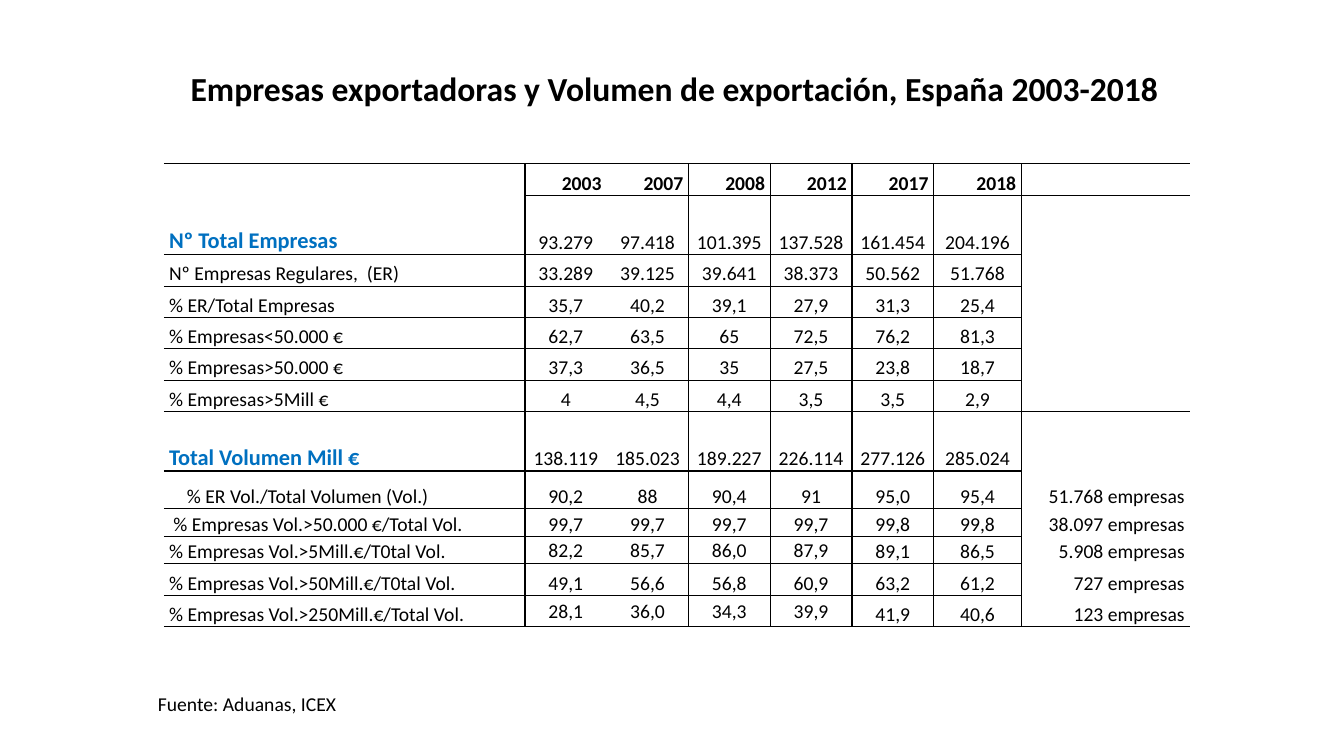
from lxml import etree
from pptx import Presentation
from pptx.dml.color import RGBColor
from pptx.enum.text import MSO_ANCHOR, PP_ALIGN
from pptx.oxml.ns import qn
from pptx.util import Cm, Pt

LEFT, CENTER, RIGHT = PP_ALIGN.LEFT, PP_ALIGN.CENTER, PP_ALIGN.RIGHT
TOP, MIDDLE, BOTTOM = MSO_ANCHOR.TOP, MSO_ANCHOR.MIDDLE, MSO_ANCHOR.BOTTOM

# Content
TITLE = "Empresas exportadoras y Volumen de exportación, España 2003-2018"
SOURCE = "Fuente: Aduanas, ICEX"
# The first label spans the first two rows
ROWS = [
    ("Nº Total Empresas", "2003", "2007", "2008", "2012", "2017", "2018", ""),
    ("", "93.279", "97.418", "101.395", "137.528", "161.454", "204.196", ""),
    ("Nº Empresas Regulares,  (ER)", "33.289", "39.125", "39.641", "38.373", "50.562", "51.768", ""),
    ("% ER/Total Empresas", "35,7", "40,2", "39,1", "27,9", "31,3", "25,4", ""),
    ("% Empresas<50.000 €", "62,7", "63,5", "65", "72,5", "76,2", "81,3", ""),
    ("% Empresas>50.000 €", "37,3", "36,5", "35", "27,5", "23,8", "18,7", ""),
    ("% Empresas>5Mill €", "4", "4,5", "4,4", "3,5", "3,5", "2,9", ""),
    ("Total Volumen Mill €", "138.119", "185.023", "189.227", "226.114", "277.126", "285.024", ""),
    ("% ER Vol./Total Volumen (Vol.)", "90,2", "88", "90,4", "91", "95,0", "95,4", "51.768 empresas"),
    ("% Empresas Vol.>50.000 €/Total Vol.", "99,7", "99,7", "99,7", "99,7", "99,8", "99,8", "38.097 empresas"),
    ("% Empresas Vol.>5Mill.€/T0tal Vol.", "82,2", "85,7", "86,0", "87,9", "89,1", "86,5", "5.908 empresas"),
    ("% Empresas Vol.>50Mill.€/T0tal Vol.", "49,1", "56,6", "56,8", "60,9", "63,2", "61,2", "727 empresas"),
    ("% Empresas Vol.>250Mill.€/Total Vol.", "28,1", "36,0", "34,3", "39,9", "41,9", "40,6", "123 empresas"),
]

# Format
COLORS = {"text": "000000", "section": "0070C0", "line": "000000"}
FONT = "Calibri"
BODY = {"size": Pt(14), "bold": False}
HEADER = {"size": Pt(14), "bold": True}
SECTION = {"size": Pt(16), "bold": True}
HEADING = {"size": Pt(24), "bold": True}

COL_WIDTHS = [9.1] + [2.06] * 5 + [2.21, 4.25]
ROW_HEIGHTS = [0.79, 1.5] + [0.79] * 5 + [1.5, 0.94, 0.71, 0.69, 0.79, 0.79]
LAST = len(COL_WIDTHS) - 1
SECTION_ROWS = (0, 7)
INDENTS = {8: 0.45, 9: 0.11}
MIDDLE_ROWS, MIDDLE_COLS = (10, 12), range(1, 5)
NOTE_TOPS, NOTE_BOTTOMS = (0, 1, 7), (0, 6, 12)


def write(tf, text, fmt, color="text", align=LEFT, spacing=1.07):
    p = tf.paragraphs[0]
    p.alignment, p.line_spacing = align, spacing
    r = p.add_run()
    r.text = text
    r.font.name = FONT
    r.font.color.rgb = RGBColor.from_string(COLORS[color])
    for name, value in fmt.items():
        setattr(r.font, name, value)


def edges(row, col):
    """Sides of a cell that carry a line: no outer sides, none between 2003 and 2007."""
    if col == LAST:
        return "L" + "T" * (row in NOTE_TOPS) + "B" * (row in NOTE_BOTTOMS)
    return "TB" + "L" * (col not in (0, 2)) + "R" * (col != 1)


def draw_borders(cell, sides):
    tcPr = cell._tc.get_or_add_tcPr()
    for side in "LRTB":
        ln = etree.SubElement(tcPr, qn(f"a:ln{side}"), w=str(Pt(1)))
        if side in sides:
            fill = etree.SubElement(ln, qn("a:solidFill"))
            etree.SubElement(fill, qn("a:srgbClr"), val=COLORS["line"])
        else:
            etree.SubElement(ln, qn("a:noFill"))


def cell_style(row, col):
    """Format, colour and alignment of a cell's text."""
    if col == 0:
        return (SECTION, "section", LEFT) if row in SECTION_ROWS else (BODY, "text", LEFT)
    if row == 0:
        return HEADER, "text", RIGHT
    return BODY, "text", RIGHT if col == LAST else CENTER


prs = Presentation()
prs.slide_width, prs.slide_height = Cm(33.87), Cm(19.05)
s = prs.slides.add_slide(prs.slide_layouts[5])

# Title
sp = s.shapes.title
sp.left, sp.top, sp.width, sp.height = Cm(3.73), Cm(1.52), Cm(26.54), Cm(1.35)
tf = sp.text_frame
tf.word_wrap, tf.vertical_anchor = True, TOP
write(tf, TITLE, HEADING, align=CENTER)

# Table
table = s.shapes.add_table(len(ROWS), len(COL_WIDTHS), Cm(4.13), Cm(4.13),
                           Cm(sum(COL_WIDTHS)), Cm(sum(ROW_HEIGHTS))).table
table.first_row = table.horz_banding = False
for column, width in zip(table.columns, COL_WIDTHS):
    column.width = Cm(width)
for line, height in zip(table.rows, ROW_HEIGHTS):
    line.height = Cm(height)
table.cell(0, 0).merge(table.cell(1, 0))

for row, values in enumerate(ROWS):
    for col, text in enumerate(values):
        cell = table.cell(row, col)
        draw_borders(cell, edges(row, col))
        cell.fill.background()
        cell.margin_top = cell.margin_bottom = 0
        cell.margin_left = cell.margin_right = Cm(0.13)
        if col == 0:
            cell.margin_left = Cm(0.13 + INDENTS.get(row, 0))
        centred = row in MIDDLE_ROWS and col in MIDDLE_COLS
        cell.vertical_anchor = MIDDLE if centred else BOTTOM
        if text:
            write(cell.text_frame, text, *cell_style(row, col))

# Source
tf = s.shapes.add_textbox(Cm(3.73), Cm(17.32), Cm(7.52), Cm(0.86)).text_frame
tf.word_wrap = True
write(tf, SOURCE, BODY, spacing=1.0)

prs.save("out.pptx")
